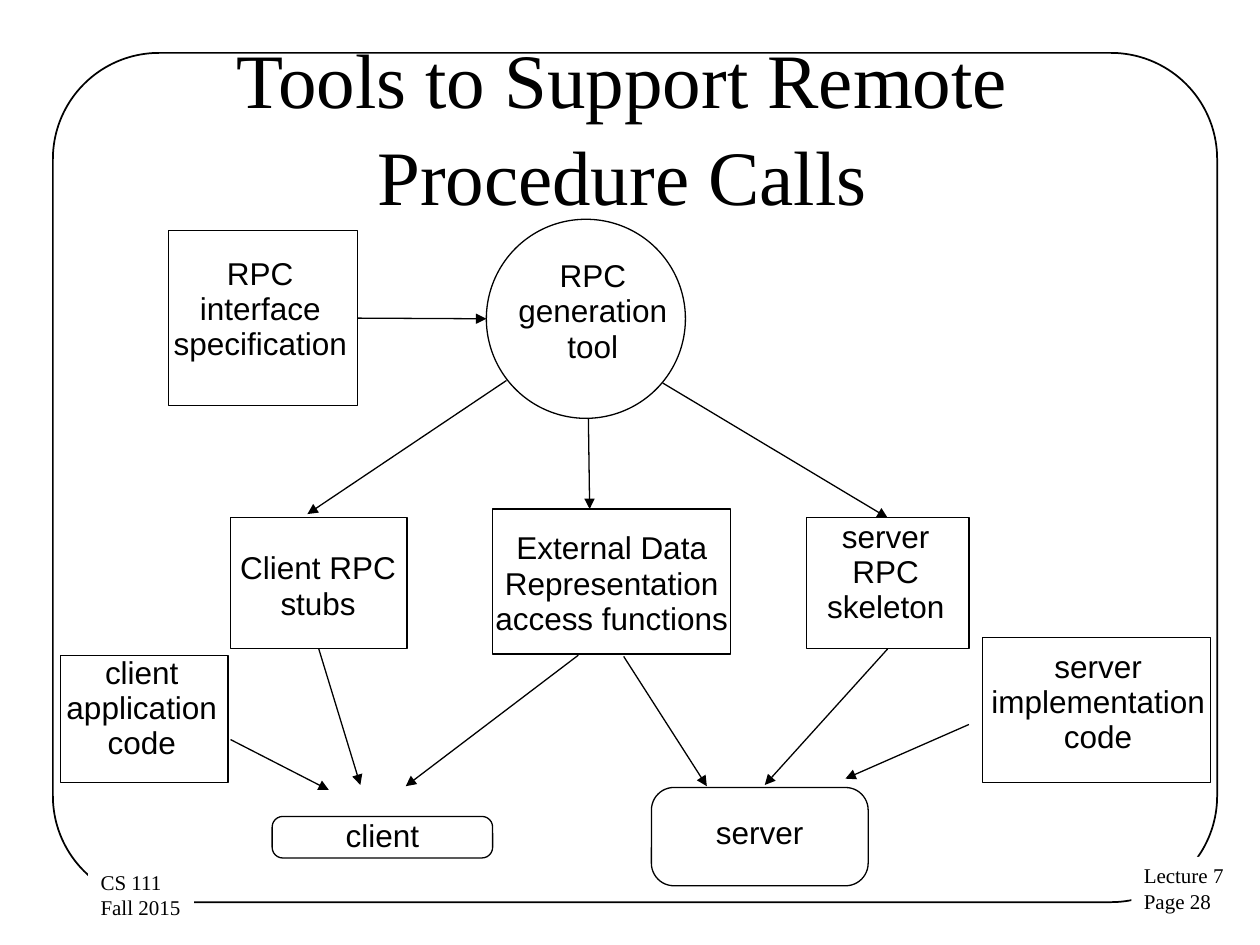
from pptx import Presentation
from pptx.util import Inches, Pt
from pptx.dml.color import RGBColor
from pptx.enum.shapes import MSO_CONNECTOR, MSO_SHAPE
from pptx.enum.text import MSO_ANCHOR, PP_ALIGN
from pptx.oxml.ns import qn
from lxml.etree import SubElement

BLACK = RGBColor(0, 0, 0)
WHITE = RGBColor(255, 255, 255)
TOP, BOTTOM, RIGHT = 0, 2, 3


def write(frame, text, size=18, font="Arial", align=PP_ALIGN.CENTER,
          anchor=MSO_ANCHOR.TOP, spacing=0.93, pad=(0, 0), wrap=False):
    """Fill a text frame; a newline starts a paragraph, \\v breaks a line."""
    frame.text = text
    frame.word_wrap = wrap
    frame.vertical_anchor = anchor
    frame.margin_left = frame.margin_right = Inches(pad[0])
    frame.margin_top = frame.margin_bottom = Inches(pad[1])
    for par in frame.paragraphs:
        par.alignment = align
        par.line_spacing = spacing
        for run in par.runs:
            run.font.size = Pt(size)
            run.font.name = font
            run.font.color.rgb = BLACK


def add_label(slide, box, text, **style):
    label = slide.shapes.add_textbox(*map(Inches, box))
    write(label.text_frame, text, **style)
    return label


def add_outline(slide, kind, box, width=0.75, round_by=None):
    shape = slide.shapes.add_shape(kind, *map(Inches, box))
    shape.shadow.inherit = False
    shape.fill.background()
    shape.line.color.rgb = BLACK
    shape.line.width = Pt(width)
    if round_by is not None:
        shape.adjustments[0] = round_by
    return shape


def add_node(slide, box, inner, text, kind=MSO_SHAPE.RECTANGLE, round_by=None):
    """Draw an outline at box and its caption at inner."""
    node = add_outline(slide, kind, box, round_by=round_by)
    add_label(slide, inner, text)
    return node


def add_arrow(slide, start, end, source=None, target=None):
    """Draw an arrow; source and target are (shape, side) pairs to join."""
    arrow = slide.shapes.add_connector(
        MSO_CONNECTOR.STRAIGHT, *map(Inches, (*start, *end)))
    if source:
        arrow.begin_connect(*source)
    if target:
        arrow.end_connect(*target)
    arrow.line.color.rgb = BLACK
    arrow.line.width = Pt(0.75)
    SubElement(arrow.line._get_or_add_ln(), qn("a:tailEnd"),
               type="triangle", w="med", len="med")
    SubElement(arrow._element.spPr, qn("a:effectLst"))


def add_frame(slide, box):
    add_outline(slide, MSO_SHAPE.ROUNDED_RECTANGLE, box, width=1, round_by=0.125)
    for place, text in (((8.98, 6.8, 0.84, 0.51), "Lecture 7\nPage 28"),
                        ((0.7, 6.85, 0.84, 0.51), "CS 111\nFall 2015")):
        note = add_label(slide, place, text, size=12, font="Times New Roman",
                         align=PP_ALIGN.LEFT, spacing=1.0, pad=(0.1, 0.05))
        note.fill.solid()
        note.fill.fore_color.rgb = WHITE


def add_title(slide, box):
    add_label(slide, box, "Tools to Support Remote \vProcedure Calls ",
              size=44, font="Times New Roman", anchor=MSO_ANCHOR.MIDDLE,
              spacing=1.05, pad=(0.1, 0.05), wrap=True)


def add_tools(slide):
    """Draw the specification, the generator and its three outputs."""
    spec = add_node(slide, (1.34, 1.83, 1.5, 1.39), (1.37, 2.04, 1.39, 0.85),
                    "RPC\ninterface\nspecification")
    add_node(slide, (3.86, 1.74, 1.58, 1.58), (4.11, 2.06, 1.19, 0.88),
             "RPC\ngeneration\ntool", kind=MSO_SHAPE.OVAL)
    stubs = add_node(slide, (1.83, 4.11, 1.4, 1.04), (1.9, 4.38, 1.25, 0.57),
                     "Client RPC\nstubs")
    add_node(slide, (3.91, 4.04, 1.89, 1.15), (3.92, 4.22, 1.87, 0.85),
             "External Data\nRepresentation\naccess functions")
    skeleton = add_node(slide, (6.4, 4.11, 1.29, 1.04), (6.56, 4.13, 0.94, 0.85),
                        "server\nRPC\nskeleton")
    add_arrow(slide, (2.84, 2.53), (3.86, 2.53), source=(spec, RIGHT))
    add_arrow(slide, (4.02, 3.02), (2.44, 4.08))
    add_arrow(slide, (4.67, 3.32), (4.68, 4.04))
    add_arrow(slide, (5.26, 3.04), (7, 4.09), target=(skeleton, TOP))
    return stubs, skeleton


def add_programs(slide, stubs, skeleton):
    """Draw the application code and the programs that all parts feed."""
    add_node(slide, (0.48, 5.2, 1.33, 1.01), (0.52, 5.21, 1.21, 0.88),
             "client\napplication\ncode")
    add_node(slide, (7.8, 5.06, 1.81, 1.15), (7.86, 5.16, 1.71, 0.88),
             "server\nimplementation\ncode")
    client = add_outline(slide, MSO_SHAPE.ROUNDED_RECTANGLE,
                         (2.16, 6.48, 1.75, 0.33), round_by=0.257)
    write(client.text_frame, "client", anchor=MSO_ANCHOR.MIDDLE, wrap=True)
    add_node(slide, (5.17, 6.25, 1.72, 0.78), (5.68, 6.48, 0.7, 0.29),
             "server", kind=MSO_SHAPE.ROUNDED_RECTANGLE, round_by=0.229)
    add_arrow(slide, (1.83, 5.87), (2.61, 6.27))
    add_arrow(slide, (2.56, 5.16), (2.86, 6.23), source=(stubs, BOTTOM))
    add_arrow(slide, (4.59, 5.2), (3.22, 6.24))
    add_arrow(slide, (4.95, 5.21), (5.61, 6.24))
    add_arrow(slide, (7, 5.17), (6.07, 6.23), source=(skeleton, BOTTOM))
    add_arrow(slide, (7.69, 5.75), (6.71, 6.18))


def main():
    deck = Presentation()
    deck.slide_width, deck.slide_height = Inches(10), Inches(7.5)
    slide = deck.slides.add_slide(deck.slide_layouts[6])
    add_frame(slide, (0.42, 0.42, 9.24, 6.74))
    add_title(slide, (0.17, 0.36, 9.69, 1.25))
    stubs, skeleton = add_tools(slide)
    add_programs(slide, stubs, skeleton)
    deck.save("out.pptx")


if __name__ == "__main__":
    main()
